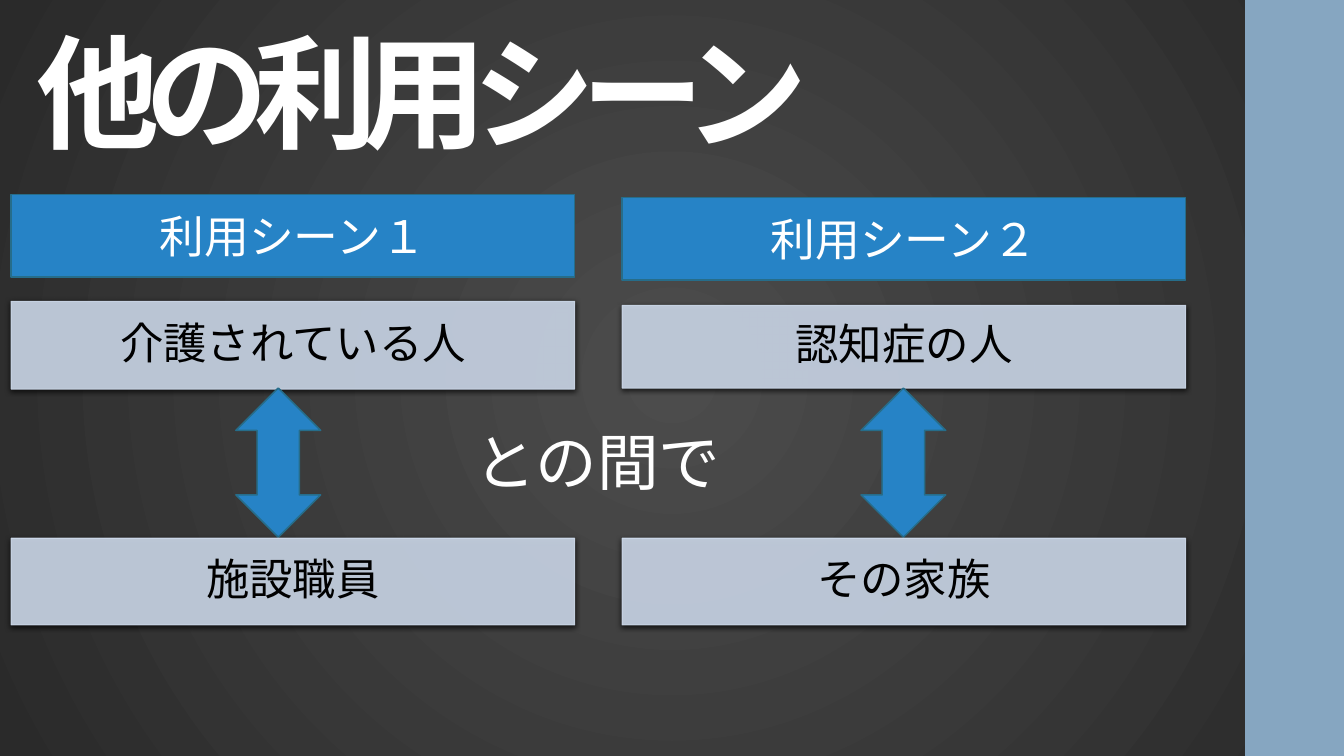
from lxml import etree
from pptx import Presentation
from pptx.dml.color import RGBColor
from pptx.enum import lang, shapes, text
from pptx.oxml import parse_xml
from pptx.oxml.ns import nsdecls, qn
from pptx.util import Inches, Pt

FONT = "Cambria"
WHITE, BLACK = "FFFFFF", "000000"
BLUE, BLUE_EDGE = "2683C6", "266D8A"
CARD, SIDE_BAND = "CDD9EA", "86A6C1"
BOX_W = 5.59


def rgb(value):
    return RGBColor.from_string(value)


def set_background(s, center, edge):
    """Fill the slide with a circular gradient running outwards from its middle."""
    fill = s.background.fill
    fill.gradient()
    for stop, color, position in zip(fill.gradient_stops, (center, edge), (0, 1)):
        stop.color.rgb = rgb(color)
        stop.position = position
    lin = next(s._element.iter(qn("a:lin")))
    lin.getparent().replace(lin, parse_xml(
        f'<a:path {nsdecls("a")} path="circle">'
        '<a:fillToRect l="50000" t="50000" r="50000" b="50000"/></a:path>'))


def write(sp, content, size, color, align=text.PP_ALIGN.CENTER,
          anchor=text.MSO_ANCHOR.MIDDLE, spacing=None):
    tf = sp.text_frame
    tf.word_wrap = True
    tf.vertical_anchor = anchor
    tf.text = content
    p = tf.paragraphs[0]
    p.alignment = align
    p.line_spacing = spacing
    r = p.runs[0]
    r.font.name = FONT
    r.font.size = Pt(size)
    r.font.color.rgb = rgb(color)
    r.font.language_id = lang.MSO_LANGUAGE_ID.JAPANESE
    return r


def add_box(s, kind, x, y, w, h, fill, line=None, weight=1.1):
    sp = s.shapes.add_shape(kind, Inches(x), Inches(y), Inches(w), Inches(h))
    sp.shadow.inherit = False
    sp.fill.solid()
    sp.fill.fore_color.rgb = rgb(fill)
    if line:
        sp.line.color.rgb = rgb(line)
        sp.line.width = Pt(weight)
    else:
        sp.line.fill.background()
    return sp


def add_label(s, x, y, w, h, content, size, anchor=text.MSO_ANCHOR.TOP, spacing=None):
    sp = s.shapes.add_textbox(Inches(x), Inches(y), Inches(w), Inches(h))
    return write(sp, content, size, WHITE, text.PP_ALIGN.LEFT, anchor, spacing)


def add_header(s, x, y, content):
    sp = add_box(s, shapes.MSO_SHAPE.RECTANGLE, x, y, BOX_W, 0.82, BLUE, BLUE_EDGE)
    write(sp, content, 32, WHITE)


def add_card(s, x, y, h, content):
    """Add a slightly transparent person card with a soft shadow below it."""
    sp = add_box(s, shapes.MSO_SHAPE.RECTANGLE, x, y, BOX_W, h, CARD, CARD, 0.75)
    sp_pr = sp._element.spPr
    for clr in sp_pr.iter(qn("a:srgbClr")):
        etree.SubElement(clr, qn("a:alpha"), val="90000")
    effects = sp_pr.find(qn("a:effectLst"))
    effects.append(parse_xml(
        f'<a:outerShdw {nsdecls("a")} blurRad="{Pt(4)}" dist="{Pt(1.2)}" dir="5400000" '
        'rotWithShape="0"><a:srgbClr val="000000"><a:alpha val="75000"/></a:srgbClr>'
        '</a:outerShdw>'))
    tf = sp.text_frame
    tf.margin_left = tf.margin_right = Inches(0.24)
    tf.margin_top = tf.margin_bottom = Inches(0.04)
    write(sp, content, 31, BLACK, spacing=0.9)


def add_scene(s, x, header_y, header, card_y, card_h, cared_for, carer, arrow_x):
    add_header(s, x, header_y, header)
    add_card(s, x, card_y, card_h, cared_for)
    add_box(s, shapes.MSO_SHAPE.UP_DOWN_ARROW, arrow_x, 3.85, 0.84, 1.48, BLUE, BLUE_EDGE)
    add_card(s, x, 5.34, 0.86, carer)


def main():
    prs = Presentation()
    prs.slide_width, prs.slide_height = Inches(13.33), Inches(7.5)
    s = prs.slides.add_slide(prs.slide_layouts[6])
    set_background(s, "4C4C4C", "2A2A2A")
    add_box(s, shapes.MSO_SHAPE.RECTANGLE, 12.35, 0, 0.98, 7.5, SIDE_BAND)

    title = add_label(s, 0.26, 0.19, 10.49, 1.51, "他の利用シーン", 88,
                      text.MSO_ANCHOR.BOTTOM, 0.9)
    title.font.bold = True
    title._r.get_or_add_rPr().set("spc", "-1000")

    add_scene(s, 0.11, 1.93, "利用シーン１", 2.99, 0.87, "介護されている人", "施設職員", 2.34)
    add_scene(s, 6.17, 1.96, "利用シーン２", 3.03, 0.82, "認知症の人", "その家族", 8.54)
    add_label(s, 4.61, 4.16, 3.65, 0.84, "との間で", 44)
    prs.save("out.pptx")


if __name__ == "__main__":
    main()
